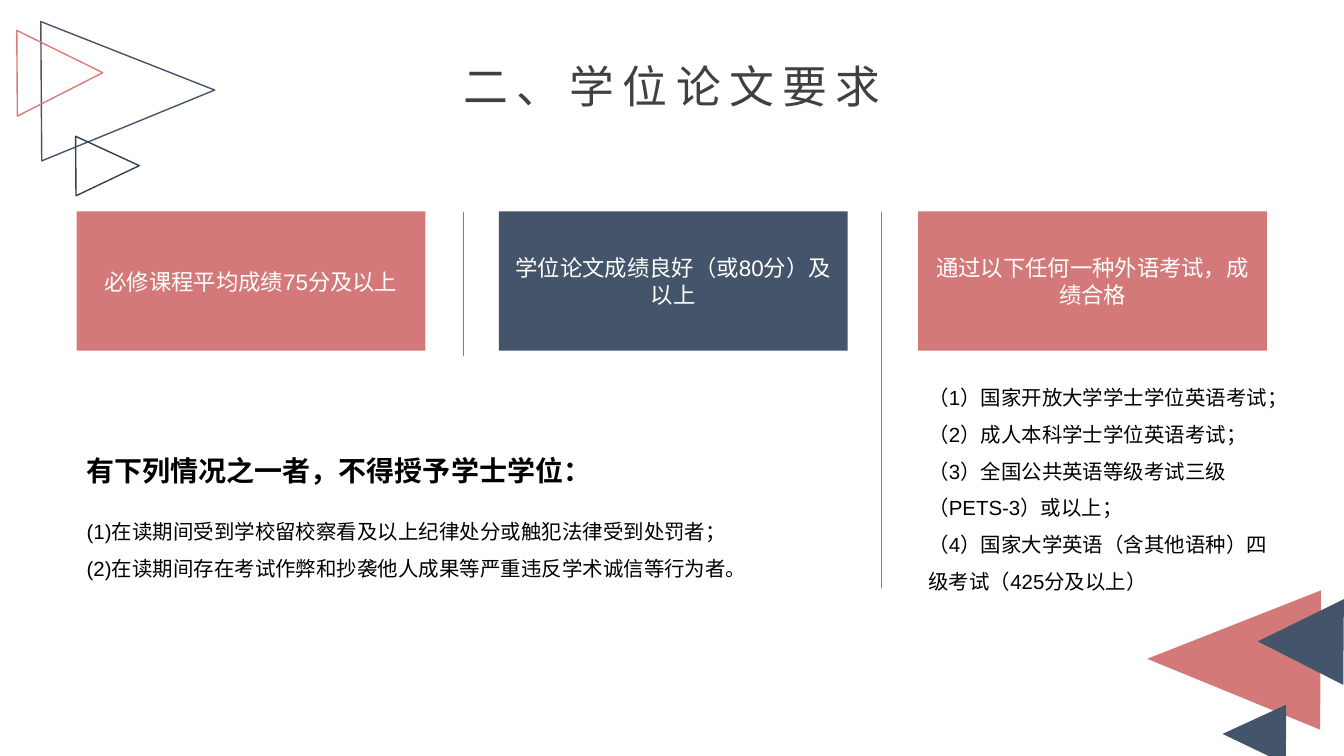
from pptx import Presentation
from pptx.dml.color import RGBColor
from pptx.enum.shapes import MSO_CONNECTOR, MSO_SHAPE
from pptx.enum.text import MSO_ANCHOR, MSO_AUTO_SIZE, PP_ALIGN
from pptx.oxml.ns import qn
from pptx.util import Cm, Pt
from lxml.etree import SubElement

COLORS = {
    "rose": "D37979", "navy": "44546A", "dark_navy": "333F50", "pink": "DD7979",
    "gray": "808080", "title": "404040", "black": "000000", "white": "FFFFFF",
}
LATIN, CJK = "Arial", "Noto Sans CJK JP"

TITLE = "二、学位论文要求"
CARDS = [
    (1.93, "rose", "必修课程平均成绩75分及以上"),
    (12.57, "navy", "学位论文成绩良好（或80分）及以上"),
    (23.14, "rose", "通过以下任何一种外语考试，成绩合格"),
]
HEADING = "有下列情况之一者，不得授予学士学位："
EXCLUSIONS = [
    "(1)在读期间受到学校留校察看及以上纪律处分或触犯法律受到处罚者；",
    "(2)在读期间存在考试作弊和抄袭他人成果等严重违反学术诚信等行为者。",
]
EXAMS = [
    "（1）国家开放大学学士学位英语考试；",
    "（2）成人本科学士学位英语考试；",
    "（3）全国公共英语等级考试三级（PETS-3）或以上；",
    "（4）国家大学英语（含其他语种）四级考试（425分及以上）",
]

CARD_TOP, CARD_WIDTH, CARD_HEIGHT = 5.33, 8.79, 3.51
DIVIDERS = [(11.66, 8.97), (22.2, 14.81)]
LARGE, SMALL, MEDIUM = (3.51, 4.37), (1.5, 1.6), (2.16, 2.16)
POINT_LEFT, POINT_RIGHT = 270.4, 89.6
TRIANGLES = [
    (29.34, 14.43, LARGE, POINT_LEFT, "rose", None),
    (30.86, 17.7, SMALL, POINT_LEFT, "navy", None),
    (31.7, 15.09, MEDIUM, POINT_LEFT, "navy", None),
    (1.47, 0.1, LARGE, POINT_RIGHT, None, "navy"),
    (1.96, 3.38, SMALL, POINT_RIGHT, None, "dark_navy"),
    (0.43, 0.76, MEDIUM, POINT_RIGHT, None, "pink"),
]


def rgb(name):
    return RGBColor.from_string(COLORS[name])


def place(shape, left, top, width, height):
    shape.left, shape.top = Cm(left), Cm(top)
    shape.width, shape.height = Cm(width), Cm(height)


def add_shape(slide, kind, box, fill=None, line=None):
    shape = slide.shapes.add_shape(kind, *map(Cm, box))
    shape.shadow.inherit = False
    if fill:
        shape.fill.solid()
        shape.fill.fore_color.rgb = rgb(fill)
    else:
        shape.fill.background()
    if line:
        shape.line.color.rgb = rgb(line)
        shape.line.width = Pt(1)
    else:
        shape.line.fill.background()
    return shape


def write(shape, lines, size, color, font=LATIN, bold=False,
          align=PP_ALIGN.LEFT, anchor=MSO_ANCHOR.TOP, spacing=1.0):
    frame = shape.text_frame
    frame.text = "\n".join(lines)
    frame.word_wrap = True
    frame.auto_size = MSO_AUTO_SIZE.NONE
    frame.vertical_anchor = anchor
    for paragraph in frame.paragraphs:
        paragraph.alignment = align
        paragraph.line_spacing = spacing
        paragraph.space_before = Pt(0)
        for run in paragraph.runs:
            run.font.name = font
            run.font.size = Pt(size)
            run.font.bold = bold
            run.font.color.rgb = rgb(color)
            SubElement(run.font._element, qn("a:ea")).set("typeface", CJK)


def write_list(placeholder, box, items):
    place(placeholder, *box)
    write(placeholder, items, 14.6, "black", spacing=1.5)
    for paragraph in placeholder.text_frame.paragraphs:
        properties = paragraph._p.get_or_add_pPr()
        properties.set("marL", "0")
        properties.set("indent", "0")
        SubElement(properties, qn("a:buNone"))


def main():
    presentation = Presentation()
    presentation.slide_width, presentation.slide_height = Cm(33.87), Cm(19.05)
    slide = presentation.slides.add_slide(presentation.slide_layouts[3])
    title, exclusions, exams = slide.placeholders

    for left, top, size, rotation, fill, line in TRIANGLES:
        triangle = add_shape(slide, MSO_SHAPE.ISOSCELES_TRIANGLE,
                             (left, top, *size), fill, line)
        triangle.rotation = rotation

    for x, bottom in DIVIDERS:
        divider = slide.shapes.add_connector(
            MSO_CONNECTOR.STRAIGHT, Cm(x), Cm(CARD_TOP), Cm(x), Cm(bottom))
        divider.line.color.rgb = rgb("gray")
        divider.line.width = Pt(0.25)
        SubElement(divider._element.spPr, qn("a:effectLst"))

    for left, fill, label in CARDS:
        card = add_shape(slide, MSO_SHAPE.RECTANGLE,
                         (left, CARD_TOP, CARD_WIDTH, CARD_HEIGHT), fill)
        write(card, [label], 16, "white", align=PP_ALIGN.CENTER,
              anchor=MSO_ANCHOR.MIDDLE)

    place(title, 11.18, 1.47, 11.51, 1.37)
    write(title, [TITLE], 32, "title", CJK, align=PP_ALIGN.CENTER,
          anchor=MSO_ANCHOR.MIDDLE)
    frame = title.text_frame
    frame.margin_left = frame.margin_right = 0
    frame.margin_top = frame.margin_bottom = 0
    frame.paragraphs[0].runs[0].font._element.set("spc", "600")

    heading = slide.shapes.add_textbox(Cm(1.93), Cm(11.3), Cm(19.43), Cm(1.09))
    write(heading, [HEADING], 20, "black", CJK, bold=True)
    write_list(exclusions, (1.93, 12.65, 19.43, 2.11), EXCLUSIONS)
    write_list(exams, (23.14, 9.27, 9.32, 5.87), EXAMS)

    presentation.save("out.pptx")


if __name__ == "__main__":
    main()
